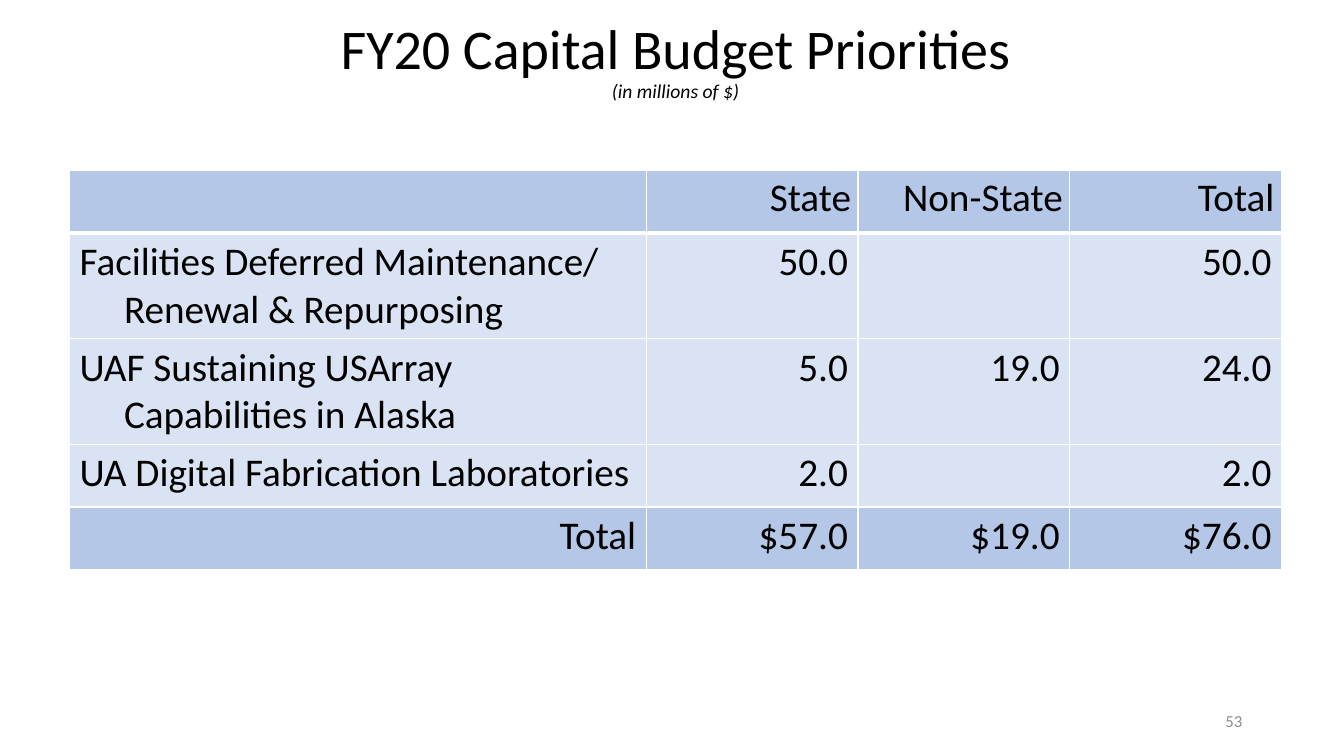
from lxml.etree import SubElement
from pptx import Presentation
from pptx.dml.color import RGBColor
from pptx.enum.text import MSO_ANCHOR as ANCHOR, PP_ALIGN as ALIGN
from pptx.oxml.ns import qn
from pptx.util import Inches, Pt

FONT = "Calibri"
COLORS = {
    "ink": "000000",
    "page_number": "8C8C8C",
    "band": "B4C7E7",
    "body": "DAE3F3",
    "rule": "FFFFFF",
}
BUDGET = [
    ("", "State", "Non-State", "Total"),
    ("Facilities Deferred Maintenance/\nRenewal & Repurposing", "50.0", "", "50.0"),
    ("UAF Sustaining USArray\nCapabilities in Alaska", "5.0", "19.0", "24.0"),
    ("UA Digital Fabrication Laboratories", "2.0", "", "2.0"),
    ("Total", "$57.0", "$19.0", "$76.0"),
]
ONE_LINE, TWO_LINES = 0.62, 1.05


def color(name):
    return RGBColor.from_string(COLORS[name])


def add_run(paragraph, text, size, ink="ink", italic=False):
    run = paragraph.add_run()
    run.text = text
    run.font.name = FONT
    run.font.size = Pt(size)
    run.font.italic = italic
    run.font.color.rgb = color(ink)


def add_text_area(slide, left, top, width, height, align):
    area = slide.shapes.add_textbox(
        Inches(left), Inches(top), Inches(width), Inches(height)
    ).text_frame
    area.word_wrap = True
    area.vertical_anchor = ANCHOR.MIDDLE
    area.paragraphs[0].alignment = align
    return area.paragraphs[0]


def add_title(slide, left, top, width, height):
    heading = add_text_area(slide, left, top, width, height, ALIGN.CENTER)
    heading.line_spacing = 0.9
    add_run(heading, "FY20 Capital Budget Priorities", 40)
    heading.add_line_break()
    add_run(heading, "(in millions of $)", 14, italic=True)


def add_page_number(slide, left, top, width, height):
    number = add_text_area(slide, left, top, width, height, ALIGN.RIGHT)
    add_run(number, "53", 12, "page_number")


def set_borders(cell, top, bottom):
    properties = cell._tc.get_or_add_tcPr()
    for side, weight in (("L", 1), ("R", 1), ("T", top), ("B", bottom)):
        line = SubElement(properties, qn(f"a:ln{side}"), w=str(Pt(weight)))
        fill = SubElement(line, qn("a:solidFill"))
        SubElement(fill, qn("a:srgbClr"), val=COLORS["rule"])


def fill_cell(cell, text, align):
    for index, line in enumerate(text.split("\n") if text else []):
        frame = cell.text_frame
        paragraph = frame.add_paragraph() if index else frame.paragraphs[0]
        paragraph.alignment = align
        if index:
            paragraph._p.get_or_add_pPr().set("marL", str(Inches(0.44)))
        add_run(paragraph, line, 28)


def add_budget_table(slide, left, top, width):
    amount_width = 2.1
    label_width = width - 3 * amount_width
    heights = [TWO_LINES if "\n" in row[0] else ONE_LINE for row in BUDGET]
    last = len(BUDGET) - 1
    table = slide.shapes.add_table(
        len(BUDGET), len(BUDGET[0]),
        Inches(left), Inches(top), Inches(width), Inches(sum(heights)),
    ).table
    for c, column in enumerate(table.columns):
        column.width = Inches(amount_width if c else label_width)
    for r, (row, height) in enumerate(zip(BUDGET, heights)):
        table.rows[r].height = Inches(height)
        for c, text in enumerate(row):
            cell = table.cell(r, c)
            if r == 0:
                cell.margin_left = cell.margin_right = Inches(0.07)
                cell.margin_top = cell.margin_bottom = Inches(0.04)
            set_borders(cell, 3 if r == 1 else 1, 3 if r == 0 else 1)
            cell.fill.solid()
            cell.fill.fore_color.rgb = color("band" if r in (0, last) else "body")
            fill_cell(cell, text, ALIGN.RIGHT if c or r == last else ALIGN.LEFT)


def main():
    deck = Presentation()
    deck.slide_width, deck.slide_height = Inches(13.33), Inches(7.5)
    slide = deck.slides.add_slide(deck.slide_layouts[6])
    add_title(slide, 0.95, 0.12, 11.5, 0.98)
    add_budget_table(slide, 0.69, 1.69, 12.02)
    add_page_number(slide, 9.42, 6.95, 3, 0.4)
    deck.save("out.pptx")


if __name__ == "__main__":
    main()
